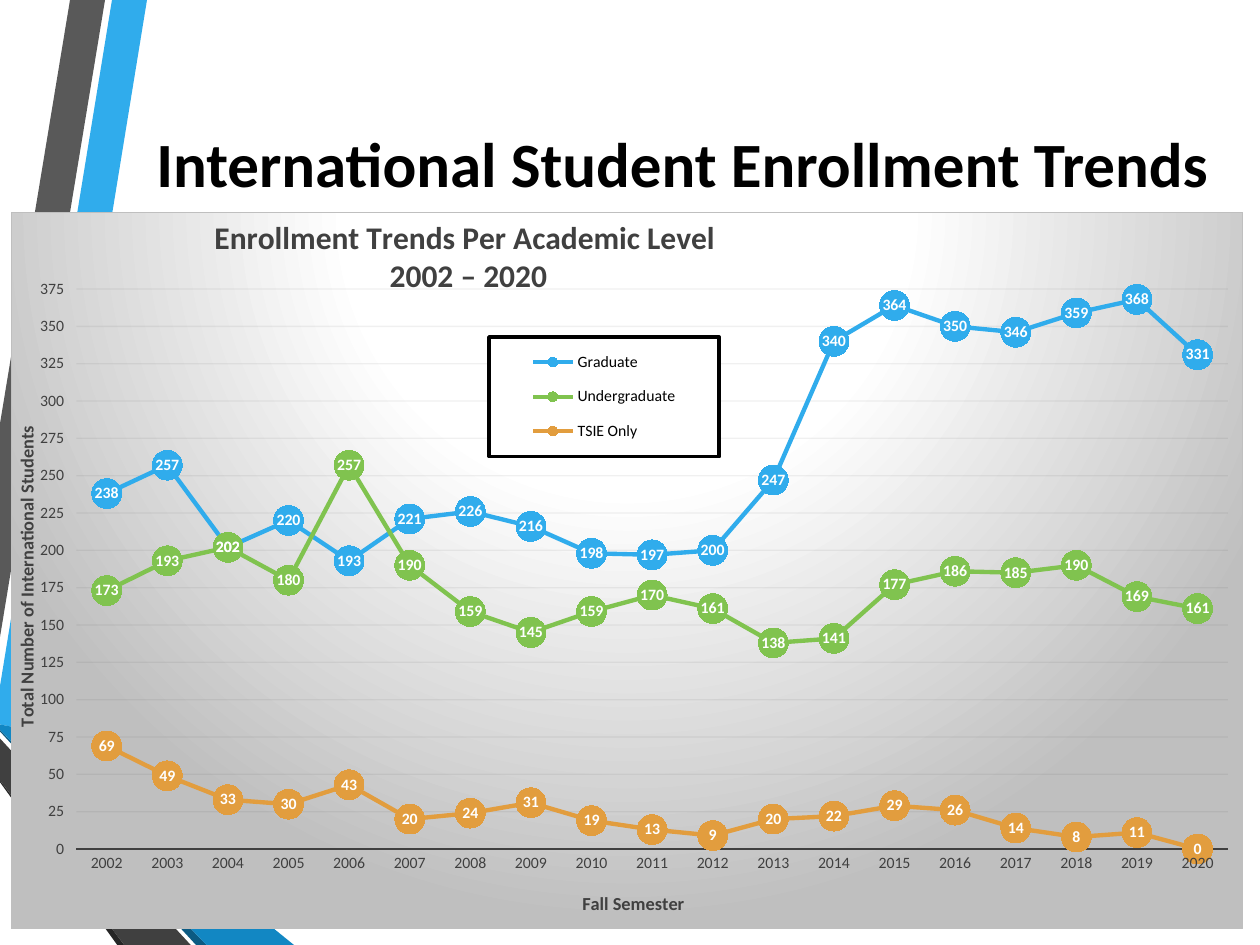
from lxml import etree
from pptx import Presentation
from pptx.chart.data import CategoryChartData
from pptx.dml.color import RGBColor
from pptx.enum.chart import (XL_CHART_TYPE, XL_LABEL_POSITION, XL_LEGEND_POSITION,
                             XL_MARKER_STYLE, XL_TICK_MARK)
from pptx.enum.text import MSO_ANCHOR, PP_ALIGN
from pptx.oxml import parse_xml
from pptx.oxml.ns import nsdecls, qn
from pptx.util import Pt

LINE_MARKERS = XL_CHART_TYPE.LINE_MARKERS
CENTER_LABEL = XL_LABEL_POSITION.CENTER
LEGEND_RIGHT = XL_LEGEND_POSITION.RIGHT
CIRCLE = XL_MARKER_STYLE.CIRCLE
TICK_NONE, TICK_OUT = XL_TICK_MARK.NONE, XL_TICK_MARK.OUTSIDE
MIDDLE, CENTER = MSO_ANCHOR.MIDDLE, PP_ALIGN.CENTER

FONT = "Calibri"
BLACK = RGBColor(0x00, 0x00, 0x00)
WHITE = RGBColor(0xFF, 0xFF, 0xFF)
SILVER = RGBColor(0xBF, 0xBF, 0xBF)
INK = RGBColor(0x40, 0x40, 0x40)
GRID = RGBColor(0x0D, 0x0D, 0x0D)
GRAY = RGBColor(0x59, 0x59, 0x59)
NEAR_BLACK = RGBColor(0x26, 0x26, 0x26)
BLUE = RGBColor(0x30, 0xAC, 0xEC)
MID_BLUE = RGBColor(0x12, 0x87, 0xC3)
DARK_BLUE = RGBColor(0x0C, 0x5A, 0x82)
GREEN = RGBColor(0x80, 0xC3, 0x4F)
ORANGE = RGBColor(0xE2, 0x9D, 0x3E)

HEADING = "International Student Enrollment Trends"
CHART_TITLE = ["Enrollment Trends Per Academic Level ", "2002 – 2020"]
CATEGORY_TITLE = "Fall Semester"
VALUE_TITLE = "Total Number of International Students"
YEARS = [str(year) for year in range(2002, 2021)]
SERIES = [
    ("Graduate", BLUE, [238, 257, 202, 220, 193, 221, 226, 216, 198, 197,
                        200, 247, 340, 364, 350, 346, 359, 368, 331]),
    ("Undergraduate", GREEN, [173, 193, 202, 180, 257, 190, 159, 145, 159, 170,
                              161, 138, 141, 177, 186, 185, 190, 169, 161]),
    ("TSIE Only", ORANGE, [69, 49, 33, 30, 43, 20, 24, 31, 19, 13,
                           9, 20, 22, 29, 26, 14, 8, 11, 0]),
]
# Corner points of the ribbons along the left edge, in points
RIBBONS = [
    (BLUE, [(0, 392), (0, 414), (16, 417), (84.5, 0), (64, 0)]),
    (GRAY, [(60, 0), (39.5, 0), (0, 242), (0, 364)]),
    (NEAR_BLACK, [(0, 446), (0, 447), (67, 540), (71, 540)]),
    (DARK_BLUE, [(0, 417), (0, 418), (112.5, 540), (117.5, 540)]),
    (MID_BLUE, [(0, 417), (117.5, 540), (168, 540), (16, 417), (0, 414)]),
    (INK, [(0, 446), (71, 540), (109, 540), (0, 422)]),
]


def style(font, size, color, bold=False):
    font.name, font.size, font.bold = FONT, Pt(size), bold
    font.color.rgb = color


def add_ribbon(page, color, points):
    builder = page.shapes.build_freeform(*points[0], scale=Pt(1))
    builder.add_line_segments(points[1:], close=True)
    ribbon = builder.convert_to_shape()
    ribbon.fill.solid()
    ribbon.fill.fore_color.rgb = color
    ribbon.line.fill.background()
    ribbon.shadow.inherit = False


def set_layout(element, x, y, width=None, height=None, inner=False):
    """Place a chart part by fractions of the chart area."""
    for old in element.findall(qn("c:layout")):
        element.remove(old)
    layout = parse_xml(f"<c:layout {nsdecls('c')}><c:manualLayout/></c:layout>")
    settings = [("xMode", "edge"), ("yMode", "edge"), ("x", x), ("y", y)]
    if inner:
        settings.insert(0, ("layoutTarget", "inner"))
    if width:
        settings += [("w", width), ("h", height)]
    for name, value in settings:
        etree.SubElement(layout[0], qn(f"c:{name}")).set("val", str(value))
    overlay = element.find(qn("c:overlay"))
    if overlay is None:
        element.insert(0, layout)
    else:
        overlay.addprevious(layout)


def area_format(fill, line_color, line_width):
    return parse_xml(
        f"<c:spPr {nsdecls('c', 'a')}>{fill}<a:ln w=\"{Pt(line_width)}\"><a:solidFill>"
        f"<a:srgbClr val=\"{line_color}\"/></a:solidFill></a:ln></c:spPr>")


def write_title(title, lines, size, x, y):
    frame = title.text_frame
    for index, line in enumerate(lines):
        para = frame.add_paragraph() if index else frame.paragraphs[0]
        para.alignment = CENTER
        span = para.add_run()
        span.text = line
        style(span.font, size, INK, bold=True)
    set_layout(title._element, x, y)
    return frame


def format_axes(chart):
    category, value = chart.category_axis, chart.value_axis
    for axis in (category, value):
        style(axis.tick_labels.font, 9, INK)
        axis.minor_tick_mark = TICK_NONE
    category.major_tick_mark = TICK_NONE
    category.format.line.color.rgb = INK
    category.format.line.width = Pt(1.5)
    write_title(category.axis_title, [CATEGORY_TITLE], 10.5, 0.461, 0.943)

    value.major_tick_mark = TICK_OUT
    value.minimum_scale, value.maximum_scale, value.major_unit = 0, 375, 25
    value.format.line.fill.background()
    value.has_major_gridlines = True
    grid = value.major_gridlines.format.line
    grid.color.rgb, grid.width = GRID, Pt(0.75)
    color = value.major_gridlines._xAx.find(qn("c:majorGridlines")).find(
        ".//" + qn("a:srgbClr"))
    etree.SubElement(color, qn("a:alpha")).set("val", "5000")
    frame = write_title(value.axis_title, [VALUE_TITLE], 10.5, 0, 0.294)
    frame._txBody.bodyPr.set("rot", "-5400000")
    frame._txBody.bodyPr.set("vert", "horz")


def format_series(chart):
    for series, (_, color, _) in zip(chart.plots[0].series, SERIES):
        series.smooth = False
        series.format.line.color.rgb = color
        series.format.line.width = Pt(2.5)
        marker = series.marker
        marker.style, marker.size = CIRCLE, 17
        marker.format.fill.solid()
        marker.format.fill.fore_color.rgb = color
        marker.format.line.fill.background()
        labels = series.data_labels
        labels.show_value = True
        labels.position = CENTER_LABEL
        style(labels.font, 9, WHITE, bold=True)


def format_legend(chart):
    chart.has_legend = True
    legend = chart.legend
    legend.position = LEGEND_RIGHT
    legend.include_in_layout = False
    style(legend.font, 9, BLACK)
    element = legend._element
    set_layout(element, 0.388, 0.174, 0.187, 0.167)
    fill = f'<a:solidFill><a:srgbClr val="{WHITE}"/></a:solidFill>'
    element.find(qn("c:overlay")).addnext(area_format(fill, BLACK, 2))


def add_enrollment_chart(page):
    data = CategoryChartData()
    data.categories = YEARS
    for name, _, values in SERIES:
        data.add_series(name, values)
    chart = page.shapes.add_chart(
        LINE_MARKERS, Pt(6), Pt(121), Pt(704.5), Pt(410), data).chart
    style(chart.font, 10, BLACK)
    chart.plots[0].vary_by_categories = False
    chart.has_title = True
    write_title(chart.chart_title, CHART_TITLE, 18, 0.162, 0.001)
    format_axes(chart)
    format_series(chart)
    format_legend(chart)
    body = chart._chartSpace.find(qn("c:chart"))
    set_layout(body.find(qn("c:plotArea")), 0.053, 0.107, 0.935, 0.782, inner=True)
    stops = "".join(f'<a:gs pos="{stop * 1000}"><a:srgbClr val="{color}"/></a:gs>'
                    for stop, color in [(0, WHITE), (39, WHITE), (100, SILVER)])
    fill = (f'<a:gradFill><a:gsLst>{stops}</a:gsLst><a:path path="circle">'
            '<a:fillToRect l="50000" t="-80000" r="50000" b="180000"/>'
            '</a:path></a:gradFill>')
    body.addnext(area_format(fill, SILVER, 0.75))


def main():
    deck = Presentation()
    deck.slide_width, deck.slide_height = Pt(720), Pt(540)
    page = deck.slides.add_slide(deck.slide_layouts[5])
    for color, points in RIBBONS:
        add_ribbon(page, color, points)

    title = page.shapes.title
    title.left, title.top, title.width, title.height = Pt(60), Pt(64), Pt(660), Pt(57)
    title.text_frame.vertical_anchor = MIDDLE
    para = title.text_frame.paragraphs[0]
    para.alignment = CENTER
    span = para.add_run()
    span.text = HEADING
    style(span.font, 36, BLACK, bold=True)

    add_enrollment_chart(page)
    deck.save("out.pptx")


if __name__ == "__main__":
    main()
